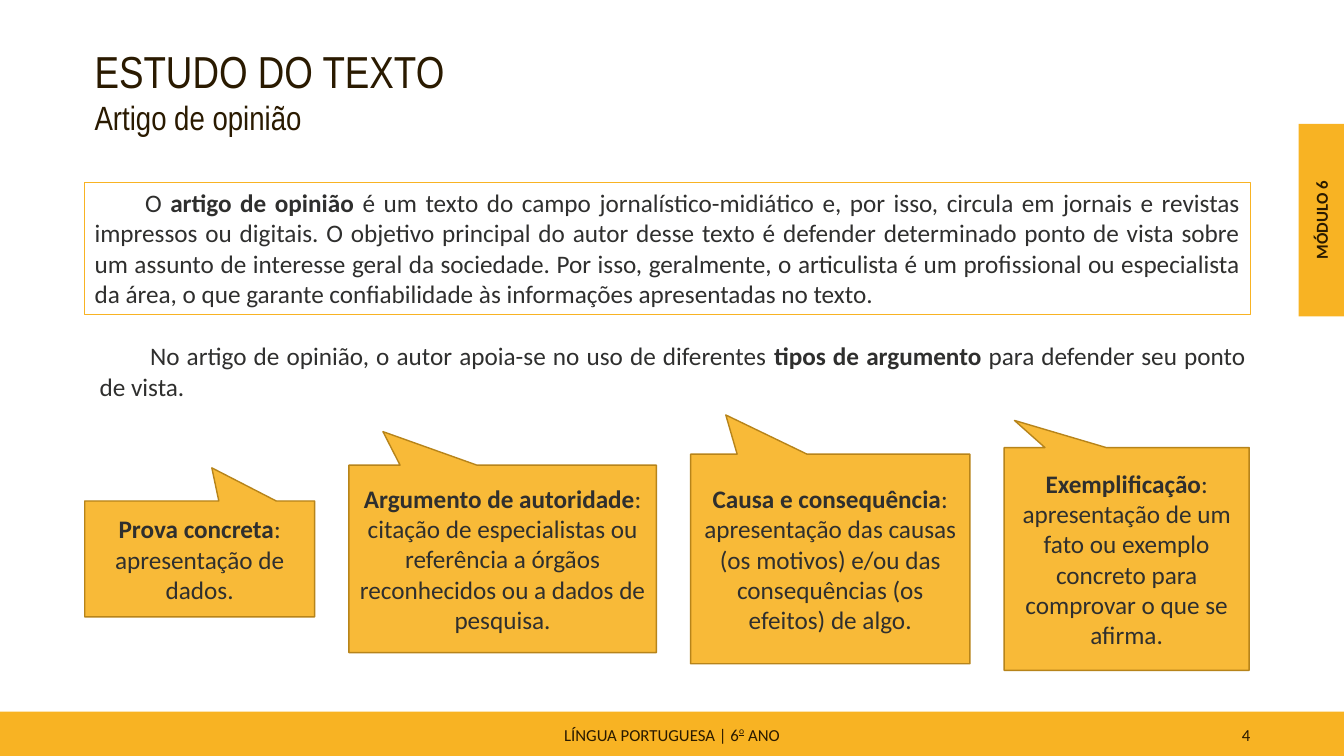
import collections

import pptx
import pptx.dml.color
import pptx.enum.shapes
import pptx.enum.text
import pptx.oxml
import pptx.oxml.ns
import pptx.util

RGB = pptx.dml.color.RGBColor
ALIGN = pptx.enum.text.PP_ALIGN
ANCHOR = pptx.enum.text.MSO_ANCHOR
SHAPE = pptx.enum.shapes.MSO_SHAPE
Inches = pptx.util.Inches
Pt = pptx.util.Pt

YELLOW = RGB(0xF8, 0xB3, 0x23)
OCHRE = RGB(0xB7, 0x84, 0x1A)
BROWN = RGB(0x2A, 0x1A, 0x00)
GREY = RGB(0x2F, 0x2F, 0x2E)

WIDTH, HEIGHT = 13.33, 7.5
LEFT, CONTENT = 0.84, 11.56  # main column
GAP = 0.34  # between callouts

Box = collections.namedtuple("Box", "left top width height")

DEFINITION = [
    ("O ", False),
    ("artigo de opinião ", True),
    ("é um texto do campo jornalístico-midiático e, por isso, circula em "
     "jornais e revistas impressos ou digitais. O objetivo principal do autor "
     "desse texto é defender determinado ponto de vista sobre um assunto de "
     "interesse geral da sociedade. Por isso, geralmente, o articulista é um "
     "profissional ou especialista da área, o que garante confiabilidade às "
     "informações apresentadas no texto.", False),
]
ARGUMENT_INTRO = [
    ("No artigo de opinião, o autor apoia-se no uso de diferentes ", False),
    ("tipos de argumento ", True),
    ("para defender seu ponto de vista.", False),
]
# Name, explanation, width, height, callout tip (shares of the shape's size)
ARGUMENTS = [
    ("Prova concreta", ": apresentação de dados.",
     2.28, 1.15, (0.053, -0.786)),
    ("Argumento de autoridade",
     ": citação de especialistas ou referência a órgãos reconhecidos ou a "
     "dados de pesquisa.", 3.05, 1.86, (-0.389, -0.679)),
    ("Causa e consequência",
     ": apresentação das causas (os motivos) e/ou das consequências (os "
     "efeitos) de algo.", 2.77, 2.08, (-0.374, -0.687)),
    ("Exemplificação",
     ": apresentação de um fato ou exemplo concreto para comprovar o que se "
     "afirma.", 2.43, 2.21, (-0.458, -0.622)),
]


def add_box(page, box, kind=SHAPE.RECTANGLE, fill=None, line=None, weight=1):
    shape = page.shapes.add_shape(kind, *map(Inches, box))
    shape.shadow.inherit = False
    if fill is None:
        shape.fill.background()
    else:
        shape.fill.solid()
        shape.fill.fore_color.rgb = fill
    if line is None:
        shape.line.fill.background()
    else:
        shape.line.color.rgb = line
        shape.line.width = Pt(weight)
    return shape


def add_text_box(page, box):
    return page.shapes.add_textbox(*map(Inches, box))


def prepare_frame(shape, anchor=ANCHOR.TOP):
    frame = shape.text_frame
    frame.word_wrap = True
    frame.vertical_anchor = anchor
    return frame


def add_run(para, text, size, color, bold=False, font="Calibri"):
    span = para.add_run()
    span.text = text
    span.font.size = Pt(size)
    span.font.name = font
    span.font.bold = bold
    span.font.color.rgb = color
    return span


def fill_body(shape, runs, align, anchor=ANCHOR.TOP, indent=0):
    para = prepare_frame(shape, anchor).paragraphs[0]
    para.alignment = align
    if indent:
        properties = para._p.get_or_add_pPr()
        properties.set("marL", "0")
        properties.set("indent", str(Inches(indent)))
    for text, bold in runs:
        add_run(para, text, 18, GREY, bold)


def draw_footer(page, box):
    add_box(page, box, fill=YELLOW)
    text_top, text_height = box.top + 0.04, 0.38

    # Subject and school year
    label = add_text_box(page, Box((box.width - 4.5) / 2, text_top, 4.5, text_height))
    para = prepare_frame(label, ANCHOR.MIDDLE).paragraphs[0]
    para.alignment = ALIGN.CENTER
    add_run(para, "LÍNGUA PORTUGUESA | 6", 12, BROWN)
    ordinal = add_run(para, "o", 12, BROWN)
    ordinal.font.underline = True
    ordinal._r.get_or_add_rPr().set("baseline", "45000")
    add_run(para, " ANO", 12, BROWN)

    # Page number
    number = add_text_box(page, Box(9.42, text_top, 3.08, text_height))
    para = prepare_frame(number, ANCHOR.MIDDLE).paragraphs[0]
    para.alignment = ALIGN.RIGHT
    add_run(para, "4", 12, BROWN)


def draw_module_tab(page, box):
    add_box(page, box, fill=YELLOW)
    length, thickness = box.height, 0.3
    label = add_text_box(page, Box(
        box.left + (box.width - length) / 2,
        box.top + (box.height - thickness) / 2, length, thickness))
    label.rotation = 270
    para = prepare_frame(label).paragraphs[0]
    para.alignment = ALIGN.CENTER
    add_run(para, "MÓDULO 6", 12, BROWN, bold=True)


def draw_title(page, box):
    frame = prepare_frame(add_text_box(page, box))
    add_run(frame.paragraphs[0], "ESTUDO DO TEXTO", 32, BROWN, font="Arial Narrow")
    add_run(frame.add_paragraph(), "Artigo de opinião", 24, BROWN, font="Arial Narrow")


def draw_definition(page, box):
    shape = add_box(page, box, line=YELLOW, weight=0.75)
    fill_body(shape, DEFINITION, ALIGN.JUSTIFY, indent=0.5)


def draw_argument_intro(page, box):
    fill_body(add_text_box(page, box), ARGUMENT_INTRO, ALIGN.JUSTIFY, indent=0.5)


def draw_arguments(page, box):
    """Callouts run left to right, all centred on the middle of the box."""
    left = box.left
    for name, explanation, width, height, tip in ARGUMENTS:
        top = box.top + (box.height - height) / 2
        callout = add_box(page, Box(left, top, width, height),
                          SHAPE.RECTANGULAR_CALLOUT, YELLOW, OCHRE)
        callout.adjustments[0], callout.adjustments[1] = tip
        color = callout.fill._xPr.find(".//" + pptx.oxml.ns.qn("a:srgbClr"))
        alpha = pptx.oxml.parse_xml(
            "<a:alpha %s val='90000'/>" % pptx.oxml.ns.nsdecls("a"))
        color.append(alpha)
        fill_body(callout, [(name, True), (explanation, False)],
                  ALIGN.CENTER, ANCHOR.MIDDLE)
        left += width + GAP


def main():
    deck = pptx.Presentation()
    deck.slide_width, deck.slide_height = Inches(WIDTH), Inches(HEIGHT)
    page = deck.slides.add_slide(deck.slide_layouts[6])

    draw_footer(page, Box(0, HEIGHT - 0.44, WIDTH, 0.44))
    draw_module_tab(page, Box(WIDTH - 0.45, 1.23, 0.45, 1.91))
    draw_title(page, Box(LEFT, 0.38, 4.15, 1.04))
    draw_definition(page, Box(LEFT, 1.81, CONTENT, 1.31))
    draw_argument_intro(page, Box(LEFT + 0.05, 3.33, CONTENT, 0.71))
    draw_arguments(page, Box(LEFT, 4.44, CONTENT, 2.21))

    deck.save("out.pptx")


if __name__ == "__main__":
    main()
